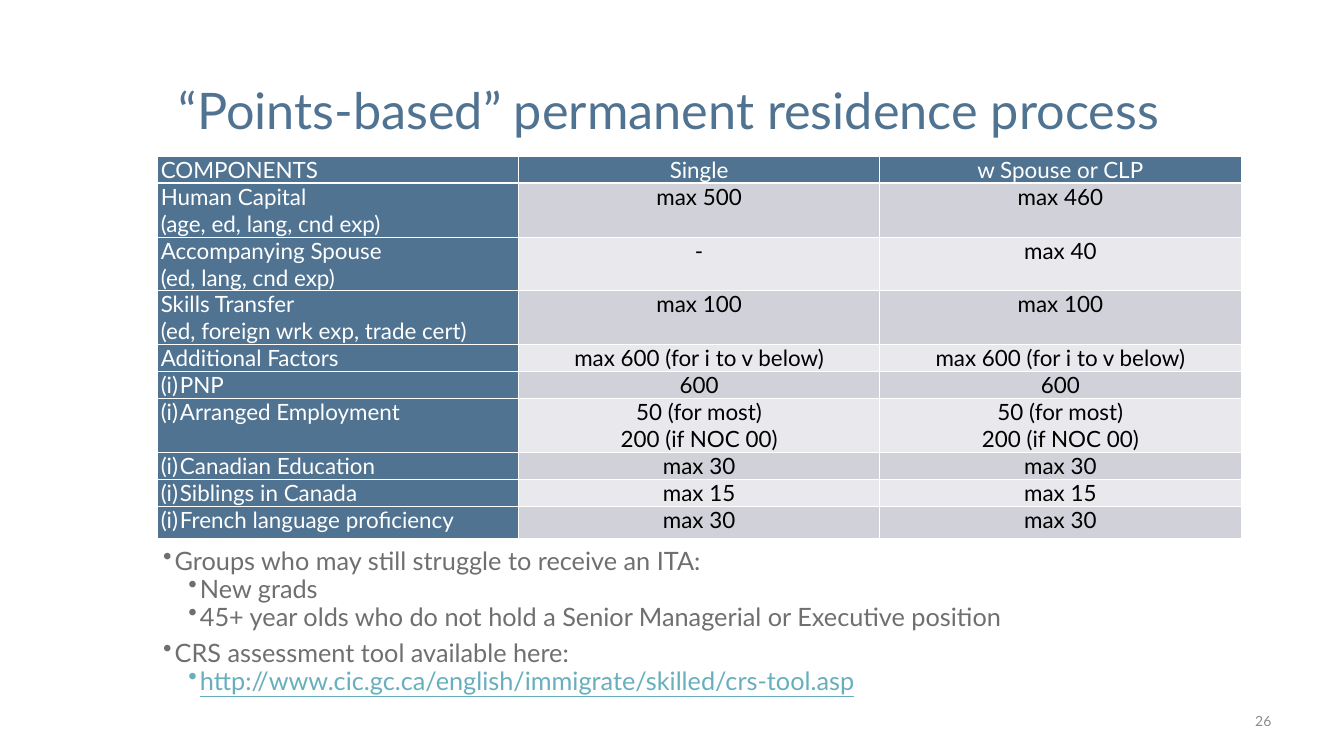
import pptx
import pptx.dml.color
import pptx.enum.text
import pptx.oxml.ns
import pptx.util
from lxml import etree

RGBColor = pptx.dml.color.RGBColor
ALIGN = pptx.enum.text.PP_ALIGN
ANCHOR = pptx.enum.text.MSO_ANCHOR
Inches = pptx.util.Inches
Pt = pptx.util.Pt
qn = pptx.oxml.ns.qn

BLUE = RGBColor(0x50, 0x73, 0x92)
TEAL = RGBColor(0x67, 0xAF, 0xBD)
GREY = RGBColor(0x6F, 0x6F, 0x6F)
LIGHT_GREY = RGBColor(0x8C, 0x8C, 0x8C)
WHITE = RGBColor(0xFF, 0xFF, 0xFF)
BLACK = RGBColor(0x00, 0x00, 0x00)
BANDS = (RGBColor(0xD1, 0xD1, 0xDA), RGBColor(0xE9, 0xE9, 0xED))
FONT = "Lato"

SLIDE_WIDTH, SLIDE_HEIGHT = Inches(26.67), Inches(15)

# Factor lines, whether the factor is numbered, points if single, points with a spouse
FACTORS = [
    (["Human Capital", "(age, ed, lang, cnd exp)"], False, ["max 500"], ["max 460"]),
    (["Accompanying Spouse", "(ed, lang, cnd exp)"], False, ["-"], ["max 40"]),
    (["Skills Transfer", "(ed, foreign wrk exp, trade cert)"], False, ["max 100"], ["max 100"]),
    (["Additional Factors"], False, *[["max 600 (for i to v below)"]] * 2),
    (["PNP"], True, ["600"], ["600"]),
    (["Arranged Employment"], True, *[["50 (for most)", "200 (if NOC 00)"]] * 2),
    (["Canadian Education"], True, ["max 30"], ["max 30"]),
    (["Siblings in Canada"], True, ["max 15"], ["max 15"]),
    (["French language proficiency"], True, ["max 30"], ["max 30"]),
]

# Level, text, colour
NOTES = [
    (0, "Groups who may still struggle to receive an ITA:", GREY),
    (1, "New grads", GREY),
    (1, "45+ year olds who do not hold a Senior Managerial or Executive position", GREY),
    (0, "CRS assessment tool available here:", GREY),
    (1, "http://www.cic.gc.ca/english/immigrate/skilled/crs-tool.asp", TEAL),
]


def across(percent):
    return round(SLIDE_WIDTH * percent / 100)


def down(percent):
    return round(SLIDE_HEIGHT * percent / 100)


def place(left, top, width, height):
    """Turn percentages of the slide into a position and size."""
    return across(left), down(top), across(width), down(height)


def add_bullet(paragraph, tag, indent, hanging, **attributes):
    properties = paragraph._p.get_or_add_pPr()
    properties.set("marL", str(Inches(indent)))
    properties.set("indent", str(-Inches(hanging)))
    etree.SubElement(properties, qn(tag), **attributes)


def write(paragraph, text, size, color, align=ALIGN.LEFT, underline=False,
          line_spacing=None, space_before=None):
    paragraph.alignment = align
    if line_spacing is not None:
        paragraph.line_spacing = line_spacing
    if space_before is not None:
        paragraph.space_before = Pt(space_before)
    run = paragraph.add_run()
    run.text = text
    run.font.name = FONT
    run.font.size = Pt(size)
    run.font.bold = False
    run.font.underline = underline
    run.font.color.rgb = color


def next_paragraph(frame, index):
    return frame.add_paragraph() if index else frame.paragraphs[0]


def add_box(slide, position, anchor=ANCHOR.TOP):
    frame = slide.shapes.add_textbox(*position).text_frame
    frame.word_wrap = True
    frame.vertical_anchor = anchor
    return frame


def set_borders(cell, bottom_width):
    properties = cell._tc.get_or_add_tcPr()
    for side, width in (("L", 1), ("R", 1), ("T", 1), ("B", bottom_width)):
        line = etree.SubElement(properties, qn(f"a:ln{side}"), w=str(Pt(width)))
        fill = etree.SubElement(line, qn("a:solidFill"))
        etree.SubElement(fill, qn("a:srgbClr"), val=str(WHITE))


def fill_cell(cell, lines, fill, color, align, numbered=False, bottom_width=1):
    cell.margin_left = cell.margin_right = Inches(0.07)
    cell.margin_top = cell.margin_bottom = 0
    set_borders(cell, bottom_width)
    cell.fill.solid()
    cell.fill.fore_color.rgb = fill
    for index, line in enumerate(lines):
        paragraph = next_paragraph(cell.text_frame, index)
        if numbered:
            add_bullet(paragraph, "a:buAutoNum", 0.38, 0.38, type="romanLcParenBoth")
        write(paragraph, line, 32, color, align)


def add_points_table(slide):
    position = place(11.7, 20.67, 80.64, 50.6)
    table = slide.shapes.add_table(len(FACTORS) + 1, 3, *position).table
    table.horz_banding = False
    for column in table.columns:
        column.width = across(26.88)

    headings = ("COMPONENTS", "Single", "w Spouse or CLP")
    for column, heading in enumerate(headings):
        align = ALIGN.CENTER if column else ALIGN.JUSTIFY
        fill_cell(table.cell(0, column), [heading], BLUE, WHITE, align, bottom_width=3)
    table.rows[0].height = down(3.33)

    for row, (factor, numbered, *points) in enumerate(FACTORS, 1):
        line_count = max(len(lines) for lines in (factor, *points))
        table.rows[row].height = down(3.3 * line_count)
        fill_cell(table.cell(row, 0), factor, BLUE, WHITE, ALIGN.JUSTIFY, numbered)
        for column, lines in enumerate(points, 1):
            fill_cell(table.cell(row, column), lines, BANDS[(row - 1) % 2], BLACK, ALIGN.CENTER)
    table.rows[len(FACTORS)].height = down(4.33)


def add_notes_list(slide):
    frame = add_box(slide, place(11.77, 72.87, 78.74, 20.47))
    for index, (level, text, color) in enumerate(NOTES):
        paragraph = next_paragraph(frame, index)
        paragraph.level = level
        add_bullet(paragraph, "a:buChar", 0.23 + 0.5 * level, 0.23, char="•")
        space_before = (10 if level else 20) if index else 0
        write(paragraph, text, 36.1, color, underline=color == TEAL,
              line_spacing=0.7, space_before=space_before)


def main():
    presentation = pptx.Presentation()
    presentation.slide_width, presentation.slide_height = SLIDE_WIDTH, SLIDE_HEIGHT
    slide = presentation.slides.add_slide(presentation.slide_layouts[6])

    title = add_box(slide, place(12.94, 5.33, 80.2, 19.33), ANCHOR.MIDDLE)
    write(title.paragraphs[0], "“Points-based” permanent residence process", 72, BLUE,
          line_spacing=0.9)
    add_notes_list(slide)
    add_points_table(slide)
    number = add_box(slide, place(71.65, 92.67, 23.32, 5.33), ANCHOR.MIDDLE)
    write(number.paragraphs[0], "26", 20, LIGHT_GREY, ALIGN.RIGHT)

    presentation.save("out.pptx")


if __name__ == "__main__":
    main()
